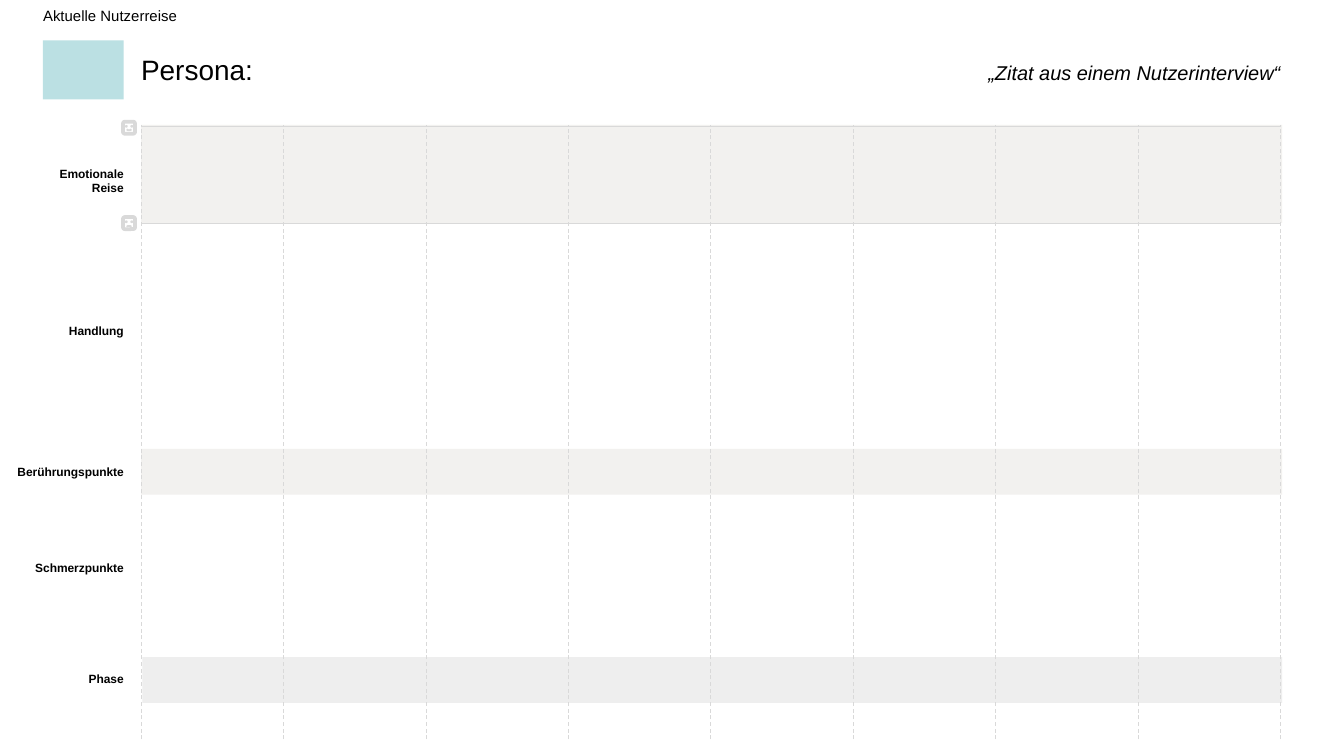
from pptx import Presentation
from pptx.dml.color import RGBColor
from pptx.enum import dml, shapes as s, text as t
from pptx.oxml.ns import qn
from pptx.util import Inches, Pt
from lxml import etree

GREY = "D9D9D9"
LEFT, RIGHT = 1.05, 9.53
TOP, BOTTOM = 0.93, 5.5
COLUMNS = 8

presentation = Presentation()
presentation.slide_width = Inches(10)
presentation.slide_height = Inches(10 * 9 / 16)
slide = presentation.slides.add_slide(presentation.slide_layouts[6])


def rgb(color):
    return RGBColor.from_string(color)


def add_figure(parent, kind, box, fill=None, line=None, weight=1):
    """Add a preset shape, filled and outlined only where a colour is given."""
    figure = parent.add_shape(kind, *map(Inches, box))
    figure.shadow.inherit = False
    if fill:
        figure.fill.solid()
        figure.fill.fore_color.rgb = rgb(fill)
    else:
        figure.fill.background()
    if line:
        figure.line.color.rgb = rgb(line)
        figure.line.width = Pt(weight)
    else:
        figure.line.fill.background()
    return figure


# Bands behind the phase and touchpoint rows
for box, color in [
    ((1.06, 4.89, 8.48, 0.34), "EEEEEE"),
    ((LEFT, 3.34, 8.49, 0.34), "F2F1EF"),
]:
    add_figure(slide.shapes, s.MSO_SHAPE.RECTANGLE, box, color)

# Headings and row labels
start, end = t.PP_ALIGN.LEFT, t.PP_ALIGN.RIGHT
for wording, box, size, align, bold, italic in [
    ("Persona:", (LEFT, 0.39, 2.67, 0.25), 15, start, False, False),
    ("„Zitat aus einem Nutzerinterview“", (5.92, 0.45, 3.61, 0.18), 10.7, end, False, True),
    ("Emotionale Reise", (0.21, 1.24, 0.71, 0.22), 6.4, end, True, False),
    ("Handlung", (0.21, 2.41, 0.71, 0.11), 6.4, end, True, False),
    ("Berührungspunkte", (0.09, 3.46, 0.83, 0.11), 6.4, end, True, False),
    ("Schmerzpunkte", (0.09, 4.17, 0.83, 0.11), 6.4, end, True, False),
    ("Phase", (0.09, 5, 0.83, 0.11), 6.4, end, True, False),
    ("Aktuelle Nutzerreise", (0.32, 0.05, 4.12, 0.13), 8, start, False, False),
]:
    frame = slide.shapes.add_textbox(*map(Inches, box)).text_frame
    frame.margin_left = frame.margin_right = frame.margin_top = frame.margin_bottom = 0
    frame.word_wrap = True
    frame.auto_size = t.MSO_AUTO_SIZE.SHAPE_TO_FIT_TEXT
    frame.paragraphs[0].alignment = align
    run = frame.paragraphs[0].add_run()
    run.text = wording
    run.font.name = "Arial"
    run.font.size = Pt(size)
    run.font.bold = bold
    run.font.italic = italic
    run.font.color.rgb = rgb("000000")

# Emotional journey band, its borders, then the dashed column grid
add_figure(slide.shapes, s.MSO_SHAPE.RECTANGLE, (LEFT, TOP, 8.49, 0.73), "F2F1EF")
rules = [(LEFT, y, RIGHT, y, False) for y in (0.94, 1.66)]
for column in range(COLUMNS + 1):
    x = LEFT + column * (RIGHT - LEFT) / COLUMNS
    rules.append((x, BOTTOM, x, TOP, True))
for *ends, dashed in rules:
    rule = slide.shapes.add_connector(s.MSO_CONNECTOR.STRAIGHT, *map(Inches, ends))
    rule.line.color.rgb = rgb(GREY)
    rule.line.width = Pt(0.5)
    if dashed:
        rule.line.dash_style = dml.MSO_LINE.DASH
    etree.SubElement(rule._element.spPr, qn("a:effectLst"))

# Happy and sad faces marking the ends of the emotional scale
FACE_X, FACE_SIZE, EYE_SIZE, MOUTH_SIZE = 0.96, 0.09, 0.02, 0.05
for face_y, mouth_top, mouth_turn in [(0.95, 0.92, 135), (1.66, 1.68, 315)]:
    face = slide.shapes.add_group_shape().shapes
    add_figure(face, s.MSO_SHAPE.ROUNDED_RECTANGLE,
               (FACE_X - FACE_SIZE / 2, face_y - FACE_SIZE / 2, FACE_SIZE, FACE_SIZE),
               line=GREY, weight=2)
    for eye_x in (FACE_X - 0.02, FACE_X + 0.02):
        add_figure(face, s.MSO_SHAPE.OVAL,
                   (eye_x - EYE_SIZE / 2, face_y - 0.02, EYE_SIZE, EYE_SIZE), GREY)
    mouth = add_figure(face, s.MSO_SHAPE.ARC,
                       (FACE_X - MOUTH_SIZE / 2, mouth_top, MOUTH_SIZE, MOUTH_SIZE),
                       line=GREY)
    mouth.rotation = mouth_turn

# Persona portrait area
add_figure(slide.shapes, s.MSO_SHAPE.RECTANGLE, (0.32, 0.3, 0.6, 0.44), "BBE0E3")

presentation.save("out.pptx")
